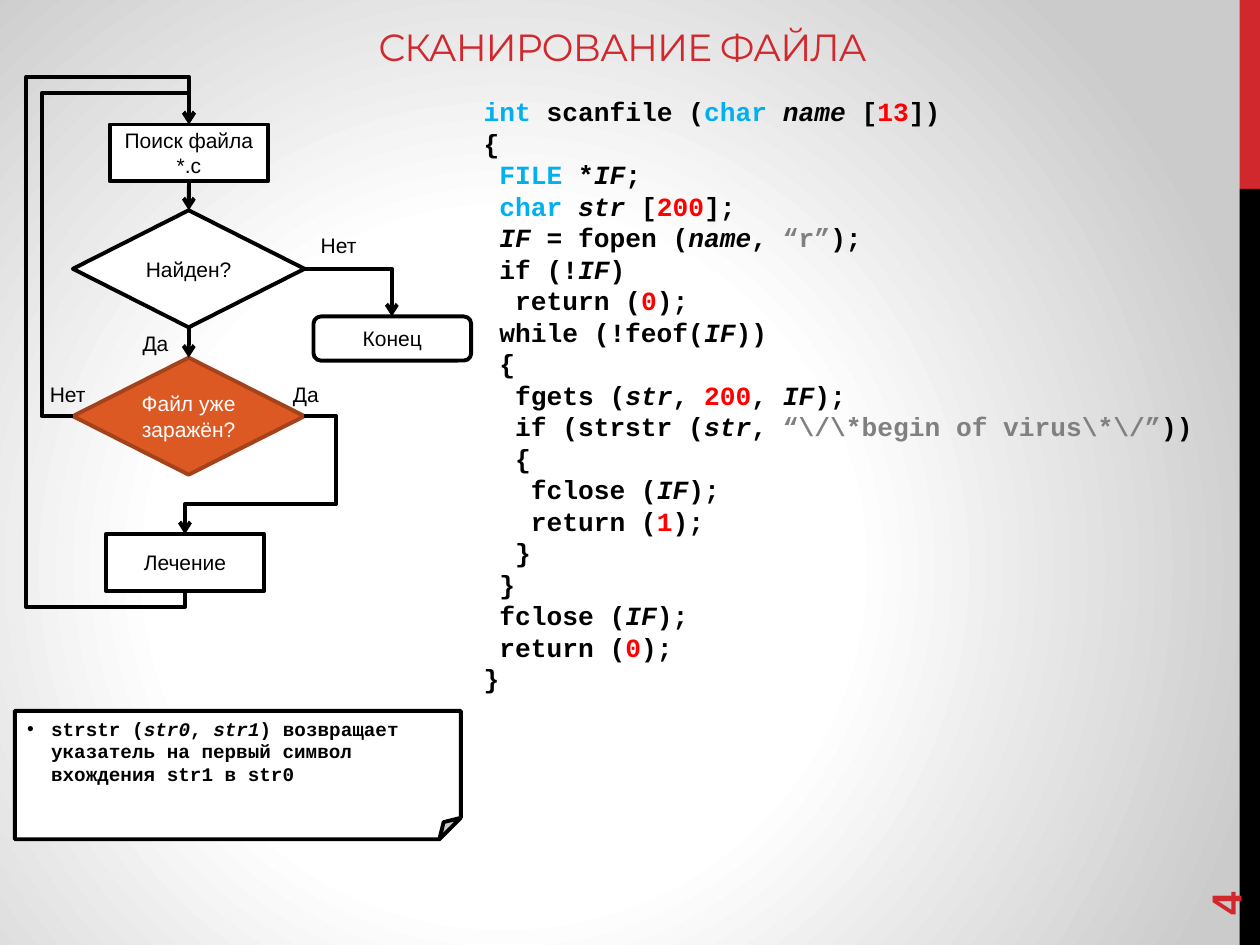
"""Build a slide with a flowchart of a file scan beside its C code."""
from dataclasses import dataclass
from itertools import groupby

from lxml.etree import SubElement
from pptx import Presentation
from pptx.dml.color import RGBColor
from pptx.enum.shapes import MSO_CONNECTOR, MSO_SHAPE
from pptx.enum.text import MSO_ANCHOR, MSO_AUTO_SIZE, PP_ALIGN
from pptx.oxml.ns import qn
from pptx.util import Cm, Pt

COLORS = {
    "black": "000000", "white": "FFFFFF", "gray": "CBCBCB", "red": "D1282E",
    "orange": "DC5924", "rust": "A3421B", "type": "00B0F0",
    "number": "FF0000", "quote": "808080",
}
TYPES = {"int", "char", "FILE"}
NAMES = {"name", "str", "IF"}
CODE = r"""int scanfile (char name [13])
{
 FILE *IF;
 char str [200];
 IF = fopen (name, “r”);
 if (!IF)
  return (0);
 while (!feof(IF))
 {
  fgets (str, 200, IF);
  if (strstr (str, “\/\*begin of virus\*\/”))
  {
   fclose (IF);
   return (1);
  }
 }
 fclose (IF);
 return (0);
}"""


@dataclass
class Box:
    """A filled shape with centred text."""
    kind: MSO_SHAPE
    at: tuple
    text: str = ""
    fill: str = "white"
    line: str = "black"
    ink: str = "black"


@dataclass
class Label:
    """A caption beside a branch."""
    text: str
    left: float
    top: float


BARS = [
    Box(MSO_SHAPE.RECTANGLE, (24.99, 0, 0.41, 3.81), fill="red", line=""),
    Box(MSO_SHAPE.RECTANGLE, (24.99, 3.81, 0.41, 15.24), fill="black", line=""),
]
STEPS = {
    "search": Box(MSO_SHAPE.RECTANGLE, (2.21, 2.51, 3.2, 1.14), "Поиск файла\n*.c"),
    "found": Box(MSO_SHAPE.FLOWCHART_DECISION, (1.47, 4.24, 4.67, 2.36), "Найден?"),
    "end": Box(MSO_SHAPE.FLOWCHART_ALTERNATE_PROCESS, (6.32, 6.38, 3.18, 0.89), "Конец"),
    "sick": Box(MSO_SHAPE.FLOWCHART_DECISION, (1.47, 7.21, 4.67, 2.36),
                "Файл уже заражён?", "orange", "rust", "white"),
    "cure": Box(MSO_SHAPE.RECTANGLE, (2.13, 10.77, 3.2, 1.14), "Лечение"),
}
LABELS = [Label("Нет", 0.69, 7.47), Label("Да", 5.49, 7.47),
          Label("Нет", 6.15, 4.47), Label("Да", 2.46, 6.45)]
LINKS = [("search", "found"), ("found", "sick")]
ROUTES = [
    [(1.47, 8.39), (0.84, 8.39), (0.84, 1.88), (3.81, 1.88), (3.81, 2.51)],
    [(6.14, 8.39), (6.78, 8.39), (6.78, 10.16), (3.73, 10.16), (3.73, 10.77)],
    [(3.73, 11.91), (3.73, 12.24), (0.53, 12.24), (0.53, 1.55), (3.81, 1.55), (3.81, 2.51)],
    [(6.14, 5.42), (7.9, 5.42), (7.9, 6.38)],
]


def color(name: str) -> RGBColor:
    """Look up a colour."""
    return RGBColor.from_string(COLORS[name])


def write(para, text: str, ink: str = "black", **look) -> None:
    """Add a run with the given font values."""
    run = para.add_run()
    run.text = text
    for key, value in ({"name": "Arial", "size": Pt(12)} | look).items():
        setattr(run.font, key, value)
    run.font.color.rgb = color(ink)


def frame(shape, anchor=MSO_ANCHOR.MIDDLE, side: float = 0.25):
    """Prepare the text frame of a shape."""
    area = shape.text_frame
    look = {"word_wrap": True, "auto_size": MSO_AUTO_SIZE.NONE, "vertical_anchor": anchor,
            "margin_left": Cm(side), "margin_right": Cm(side),
            "margin_top": Cm(0.13), "margin_bottom": Cm(0.13)}
    for key, value in look.items():
        setattr(area, key, value)
    return area


def place(shape, *at: float) -> None:
    """Move and size a shape."""
    for key, value in zip(("left", "top", "width", "height"), at):
        setattr(shape, key, Cm(value))


def fill_text(area, text: str, ink: str = "black") -> None:
    """Write centred lines as paragraphs."""
    for i, line in enumerate(text.split("\n")):
        para = area.add_paragraph() if i else area.paragraphs[0]
        para.alignment = PP_ALIGN.CENTER
        write(para, line, ink)


def draw_box(slide, box: Box):
    """Draw a shape with its text."""
    shape = slide.shapes.add_shape(box.kind, *map(Cm, box.at))
    shape.shadow.inherit = False
    shape.fill.solid()
    shape.fill.fore_color.rgb = color(box.fill)
    if box.line:
        shape.line.color.rgb = color(box.line)
        shape.line.width = Pt(2.25)
    else:
        shape.line.fill.background()
    if box.text:
        fill_text(frame(shape, side=0.13), box.text, box.ink)
    return shape


def draw_label(slide, label: Label) -> None:
    """Draw a branch caption."""
    shape = slide.shapes.add_textbox(Cm(label.left), Cm(label.top), Cm(1.35), Cm(0.94))
    fill_text(frame(shape, side=0), label.text)


def style_arrow(link) -> None:
    """Give a connector its line and arrowhead."""
    link.line.color.rgb = color("black")
    link.line.width = Pt(2.25)
    props = link._element.spPr
    SubElement(props.find(qn("a:ln")), qn("a:tailEnd"), type="arrow")
    SubElement(props, qn("a:effectLst"))


def draw_route(slide, points: list) -> None:
    """Draw a bent connector through the points."""
    start, end = points[0], points[-1]
    span = [end[0] - start[0], end[1] - start[1]]
    first = 0 if points[1][1] == start[1] else 1
    link = slide.shapes.add_connector(MSO_CONNECTOR.ELBOW, *map(Cm, start + end))
    props = link._element.spPr
    if first:
        wide, high = abs(span[1]), abs(span[0])
        place(link, (start[0] + end[0] - wide) / 2, (start[1] + end[1] - high) / 2, wide, high)
        grid = props.find(qn("a:xfrm"))
        for key, value in {"rot": "5400000", "flipH": str(int(span[1] < 0)),
                           "flipV": str(int(span[0] > 0))}.items():
            grid.set(key, value)
    geom = props.find(qn("a:prstGeom"))
    geom.set("prst", f"bentConnector{len(points) - 1}")
    guides = geom.find(qn("a:avLst"))
    for i, point in enumerate(points[1:-2]):
        axis = (first + i) % 2
        share = round((point[axis] - start[axis]) / span[axis] * 100000)
        SubElement(guides, qn("a:gd"), name=f"adj{i + 1}", fmla=f"val {share}")
    style_arrow(link)


def draw_link(slide, top, low) -> None:
    """Join two steps with a straight arrow."""
    link = slide.shapes.add_connector(MSO_CONNECTOR.STRAIGHT, 0, 0, 0, 0)
    link.begin_connect(top, 2)
    link.end_connect(low, 0)
    style_arrow(link)


def indent(para, size: float, mark: str = "") -> None:
    """Set a hanging bullet, or none."""
    props = para._p.get_or_add_pPr()
    props.set("marL", str(Cm(size)))
    props.set("indent", str(-Cm(size)))
    if mark:
        SubElement(props, qn("a:buFont"), typeface="Arial")
        SubElement(props, qn("a:buChar"), char=mark)
    else:
        SubElement(props, qn("a:buNone"))


def write_code(para, line: str) -> None:
    """Write a code line with highlighted words."""
    look = {"name": "Courier New", "size": Pt(15), "bold": True}
    head, mark, rest = line.partition("“")
    quote, close, tail = rest.partition("”")
    for is_word, chars in groupby(head, str.isalnum):
        word = "".join(chars)
        ink = "type" if word in TYPES else "number" if word.isdigit() else "black"
        write(para, word, ink, italic=word in NAMES, **look)
    if mark:
        write(para, mark + quote + close, "quote", **look)
        write(para, tail, **look)


def paint(slide) -> None:
    """Set the radial background."""
    slide.background.fill.gradient()
    grad = slide._element.find(".//" + qn("a:gradFill"))
    for child in list(grad):
        grad.remove(child)
    stops = SubElement(grad, qn("a:gsLst"))
    for pos, name in ((0, "white"), (44, "white"), (100, "gray")):
        stop = SubElement(stops, qn("a:gs"), pos=str(pos * 1000))
        SubElement(stop, qn("a:srgbClr"), val=COLORS[name])
    shade = SubElement(grad, qn("a:path"), {"path": "circle"})
    SubElement(shade, qn("a:fillToRect"), l="40000", t="60000", r="60000", b="40000")


def main() -> None:
    """Build and save the slide."""
    deck = Presentation()
    deck.slide_width, deck.slide_height = Cm(25.4), Cm(19.05)
    slide = deck.slides.add_slide(deck.slide_layouts[1])
    paint(slide)
    for bar in BARS:
        draw_box(slide, bar)

    title, body = slide.placeholders
    place(title, 0, 0.43, 25.1, 1.09)
    para = frame(title, MSO_ANCHOR.BOTTOM).paragraphs[0]
    para.alignment = PP_ALIGN.CENTER
    write(para, "СКАНИРОВАНИЕ ФАЙЛА", "red", name="Montserrat", size=Pt(21.6))
    para.runs[0].font._element.set("spc", "-60")

    place(body, 9.5, 1.8, 15.39, 15.93)
    area = frame(body, MSO_ANCHOR.TOP)
    for i, line in enumerate(CODE.split("\n")):
        para = area.add_paragraph() if i else area.paragraphs[0]
        para.line_spacing, para.space_before = Pt(18), Pt(0)
        indent(para, 0)
        write_code(para, line)

    page = slide.shapes.add_textbox(Cm(22.86), Cm(16.36), Cm(3.66), Cm(1.02))
    page.rotation = 270
    write(frame(page).paragraphs[0], "4", "red", size=Pt(24), bold=True)

    steps = {key: draw_box(slide, box) for key, box in STEPS.items()}
    for points in ROUTES:
        draw_route(slide, points)
    for top, low in LINKS:
        draw_link(slide, steps[top], steps[low])
    for label in LABELS:
        draw_label(slide, label)

    note = draw_box(slide, Box(MSO_SHAPE.FOLDED_CORNER, (0.3, 14.33, 8.99, 2.59)))
    para = frame(note, MSO_ANCHOR.TOP).paragraphs[0]
    para.alignment, para.line_spacing = PP_ALIGN.LEFT, Pt(13)
    indent(para, 0.48, "•")
    parts = ["strstr (", "str0", ", ", "str1",
             ") возвращает указатель на первый символ вхождения str1 в str0"]
    for i, part in enumerate(parts):
        write(para, part, name="Courier New", size=Pt(11), bold=True, italic=i % 2 == 1)
    deck.save("out.pptx")


if __name__ == "__main__":
    main()
